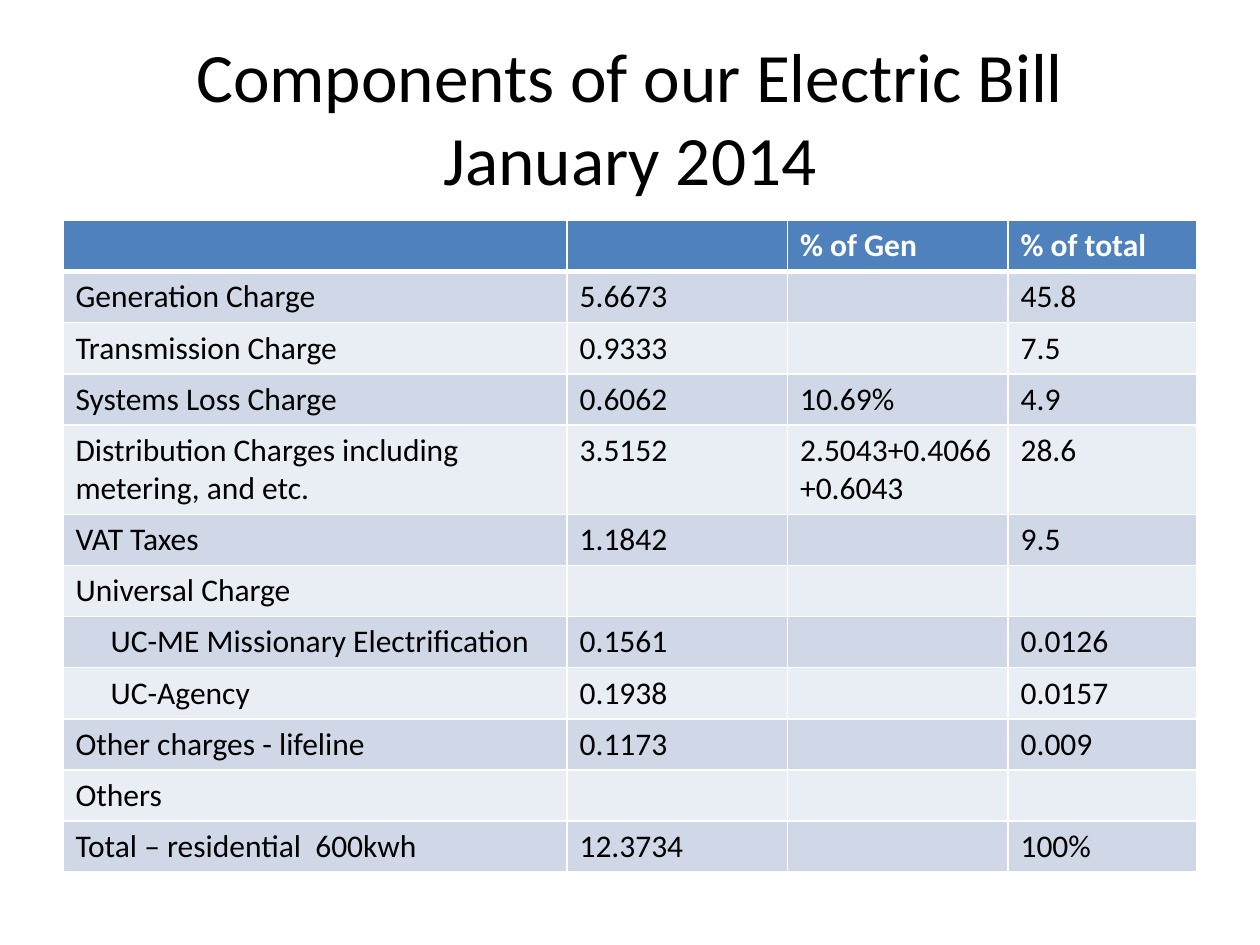
"""Build a slide with a table of the parts of an electric bill."""
from dataclasses import dataclass

from lxml import etree
from pptx import Presentation
from pptx import util as u
from pptx.dml import color
from pptx.enum import text
from pptx.oxml import ns


@dataclass(frozen=True)
class Theme:
    font: str = "Calibri"
    ink: str = "000000"
    white: str = "FFFFFF"
    head: str = "4F81BD"
    bands: tuple = ("D0D8E8", "E9EDF4")
    big: float = 39.6
    body: float = 18
    thin: float = 1
    thick: float = 3
    step: float = 20


THEME = Theme()
COLS = (288, 126, 126, 108)
ROW = 29.2
HEAD = ("", "", "% of Gen", "% of total")
ROWS = (
    (0, "Generation Charge", "5.6673", "", "45.8"),
    (0, "Transmission Charge", "0.9333", "", "7.5"),
    (0, "Systems Loss Charge", "0.6062", "10.69%", "4.9"),
    (0, "Distribution Charges including metering, and etc.", "3.5152",
     "2.5043+0.4066+0.6043", "28.6"),
    (0, "VAT Taxes", "1.1842", "", "9.5"),
    (0, "Universal Charge", "", "", ""),
    (1, "UC-ME Missionary Electrification", "0.1561", "", "0.0126"),
    (1, "UC-Agency", "0.1938", "", "0.0157"),
    (0, "Other charges - lifeline", "0.1173", "", "0.009"),
    (0, "Others", "", "", ""),
    (0, "Total – residential  600kwh", "12.3734", "", "100%"),
)


def apply(item, **values):
    """Set each named attribute on the item."""
    for name, value in values.items():
        setattr(item, name, value)


def style(font, size, tint, bold=False):
    """Format a font with the theme typeface."""
    apply(font, name=THEME.font, size=u.Pt(size), bold=bold)
    font.color.rgb = color.RGBColor.from_string(tint)


def border(cell, **widths):
    """Draw white borders on the sides L, R, T and B of a cell."""
    props = cell._tc.get_or_add_tcPr()
    for side, width in widths.items():
        line = etree.SubElement(props, ns.qn(f"a:ln{side}"), w=str(u.Pt(width)))
        fill = etree.SubElement(line, ns.qn("a:solidFill"))
        etree.SubElement(fill, ns.qn("a:srgbClr"), val=THEME.white)


def title(slide, words):
    """Place and format the title."""
    box = slide.shapes.title
    apply(box, left=u.Pt(36), top=u.Pt(21.6), width=u.Pt(648), height=u.Pt(90))
    frame = box.text_frame
    apply(frame, text=words, word_wrap=True,
          auto_size=text.MSO_AUTO_SIZE.NONE,
          vertical_anchor=text.MSO_ANCHOR.MIDDLE)
    para = frame.paragraphs[0]
    para.alignment = text.PP_ALIGN.CENTER
    for run in para.runs:
        style(run.font, THEME.big, THEME.ink)


def fill_cell(cell, words, row, level=0):
    """Write one cell, with its fill and borders set by the row."""
    head = row == 0
    border(cell, L=THEME.thin, R=THEME.thin,
           T=THEME.thick if row == 1 else THEME.thin,
           B=THEME.thick if head else THEME.thin)
    cell.fill.solid()
    tint = THEME.head if head else THEME.bands[(row - 1) % 2]
    cell.fill.fore_color.rgb = color.RGBColor.from_string(tint)
    para = cell.text_frame.paragraphs[0]
    if words:
        run = para.add_run()
        run.text = words
        style(run.font, THEME.body, THEME.white if head else THEME.ink, head)
    if level:
        para._p.get_or_add_pPr().set("marL", str(u.Pt(level * THEME.step)))


def table(slide):
    """Add the table of charges."""
    count = len(ROWS) + 1
    grid = slide.shapes.add_table(count, len(COLS), u.Pt(36), u.Pt(126),
                                  u.Pt(sum(COLS)), u.Pt(ROW * count)).table
    for col, width in zip(grid.columns, COLS):
        col.width = u.Pt(width)
    for row, (level, *cells) in enumerate(((0, *HEAD), *ROWS)):
        grid.rows[row].height = u.Pt(ROW)
        for col, words in enumerate(cells):
            fill_cell(grid.cell(row, col), words, row, 0 if col else level)


def main():
    """Build and save the slide."""
    deck = Presentation()
    apply(deck, slide_width=u.Pt(720), slide_height=u.Pt(540))
    slide = deck.slides.add_slide(deck.slide_layouts[5])
    title(slide, "Components of our Electric Bill\vJanuary 2014")
    table(slide)
    deck.save("out.pptx")


if __name__ == "__main__":
    main()
